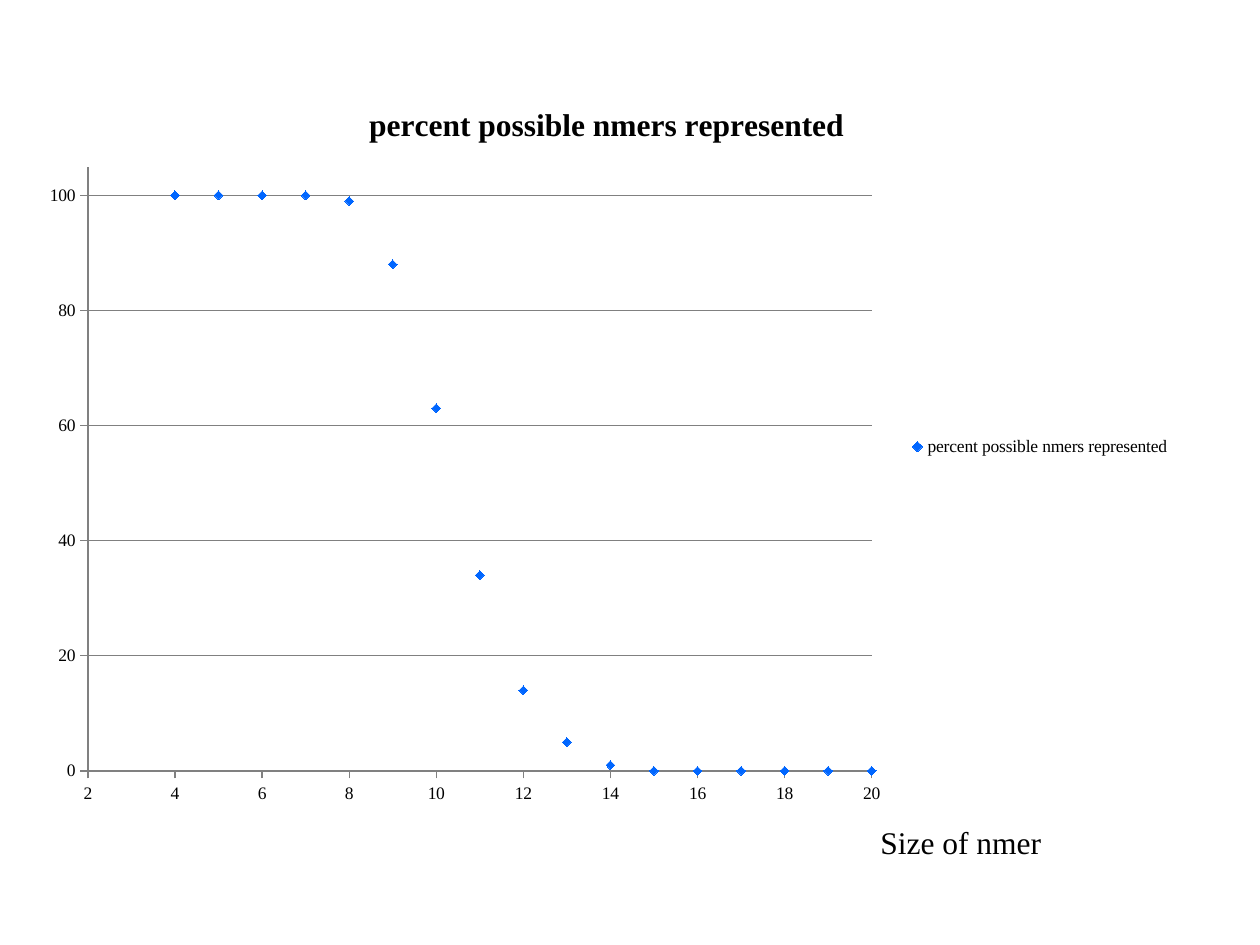
import pptx
import pptx.chart.data
import pptx.dml.color
import pptx.enum.chart
import pptx.enum.text
import pptx.oxml
import pptx.oxml.ns
import pptx.util

Pt = pptx.util.Pt
BLACK = pptx.dml.color.RGBColor(0x00, 0x00, 0x00)
BLUE = pptx.dml.color.RGBColor(0x00, 0x66, 0xFF)
GREY = pptx.dml.color.RGBColor(0x80, 0x80, 0x80)

CHART_TITLE = "percent possible nmers represented"
FIRST_SIZE, LAST_SIZE = 4, 29
PERCENTS = [100, 100, 100, 100, 99, 88, 63, 34, 14, 5, 1]  # zero for longer nmers


class SlideBuilder:
    font_name = "Times New Roman"
    body_size = Pt(10)
    heading_size = Pt(18)

    def __init__(self, presentation):
        self.slide = presentation.slides.add_slide(presentation.slide_layouts[6])

    def style_font(self, font, size, bold=False):
        font.name = self.font_name
        font.size = size
        font.bold = bold
        font.color.rgb = BLACK

    def add_label(self, text, left, top, width, height):
        box = self.slide.shapes.add_textbox(Pt(left), Pt(top), Pt(width), Pt(height))
        frame = box.text_frame
        frame.word_wrap = False
        frame.auto_size = pptx.enum.text.MSO_AUTO_SIZE.SHAPE_TO_FIT_TEXT
        run = frame.paragraphs[0].add_run()
        run.text = text
        self.style_font(run.font, self.heading_size)

    def style_axis(self, axis, minimum, maximum, step):
        axis.minimum_scale = minimum
        axis.maximum_scale = maximum
        axis.major_unit = step
        axis.major_tick_mark = pptx.enum.chart.XL_TICK_MARK.OUTSIDE
        axis.minor_tick_mark = pptx.enum.chart.XL_TICK_MARK.NONE
        axis.tick_labels.number_format = "General"
        axis.tick_labels.number_format_is_linked = False
        axis.format.line.color.rgb = GREY
        self.style_font(axis.tick_labels.font, self.body_size)

    def place_plot(self, chart, x, y, width, height):
        """Fix the inner plot area as fractions of the chart."""
        plot_area = chart.plots[0]._element.getparent()
        for layout in plot_area.findall(pptx.oxml.ns.qn("c:layout")):
            plot_area.remove(layout)
        plot_area.insert(0, pptx.oxml.parse_xml(
            f'<c:layout {pptx.oxml.ns.nsdecls("c")}><c:manualLayout>'
            '<c:layoutTarget val="inner"/><c:xMode val="edge"/><c:yMode val="edge"/>'
            f'<c:x val="{x}"/><c:y val="{y}"/><c:w val="{width}"/><c:h val="{height}"/>'
            '</c:manualLayout></c:layout>'))

    def add_scatter(self, title, points, left, top, width, height):
        data = pptx.chart.data.XyChartData()
        series_data = data.add_series(title)
        for x, y in points:
            series_data.add_data_point(x, y)
        chart = self.slide.shapes.add_chart(
            pptx.enum.chart.XL_CHART_TYPE.XY_SCATTER,
            Pt(left), Pt(top), Pt(width), Pt(height), data).chart
        self.style_font(chart.font, self.body_size)
        chart.plots[0].vary_by_categories = False

        # Title and legend
        chart.has_title = True
        run = chart.chart_title.text_frame.paragraphs[0].add_run()
        run.text = title
        self.style_font(run.font, self.heading_size, bold=True)
        chart.has_legend = True
        chart.legend.position = pptx.enum.chart.XL_LEGEND_POSITION.RIGHT
        chart.legend.include_in_layout = False
        self.style_font(chart.legend.font, self.body_size)

        # Axes
        self.style_axis(chart.category_axis, 2, 20, 2)
        self.style_axis(chart.value_axis, 0, 105, 20)
        chart.category_axis.has_major_gridlines = False
        chart.value_axis.has_major_gridlines = True
        chart.value_axis.major_gridlines.format.line.color.rgb = GREY

        # Markers without a joining line
        series = chart.plots[0].series[0]
        series.smooth = False
        series.format.line.fill.background()
        series.marker.style = pptx.enum.chart.XL_MARKER_STYLE.DIAMOND
        series.marker.size = 5
        series.marker.format.fill.solid()
        series.marker.format.fill.fore_color.rgb = BLUE
        series.marker.format.line.color.rgb = BLUE
        return chart


def main():
    presentation = pptx.Presentation()
    presentation.slide_width = Pt(720)
    presentation.slide_height = Pt(540)
    builder = SlideBuilder(presentation)

    # Scatter chart
    sizes = range(FIRST_SIZE, LAST_SIZE + 1)
    percents = PERCENTS + [0] * (len(sizes) - len(PERCENTS))
    chart = builder.add_scatter(CHART_TITLE, zip(sizes, percents), 17.28, 44.64, 658.8, 421.2)
    builder.place_plot(chart, 0.05, 0.12, 0.68, 0.82)

    # Label below the horizontal axis
    builder.add_label("Size of nmer", 496, 466.5, 107, 29)

    presentation.save("out.pptx")


if __name__ == "__main__":
    main()
